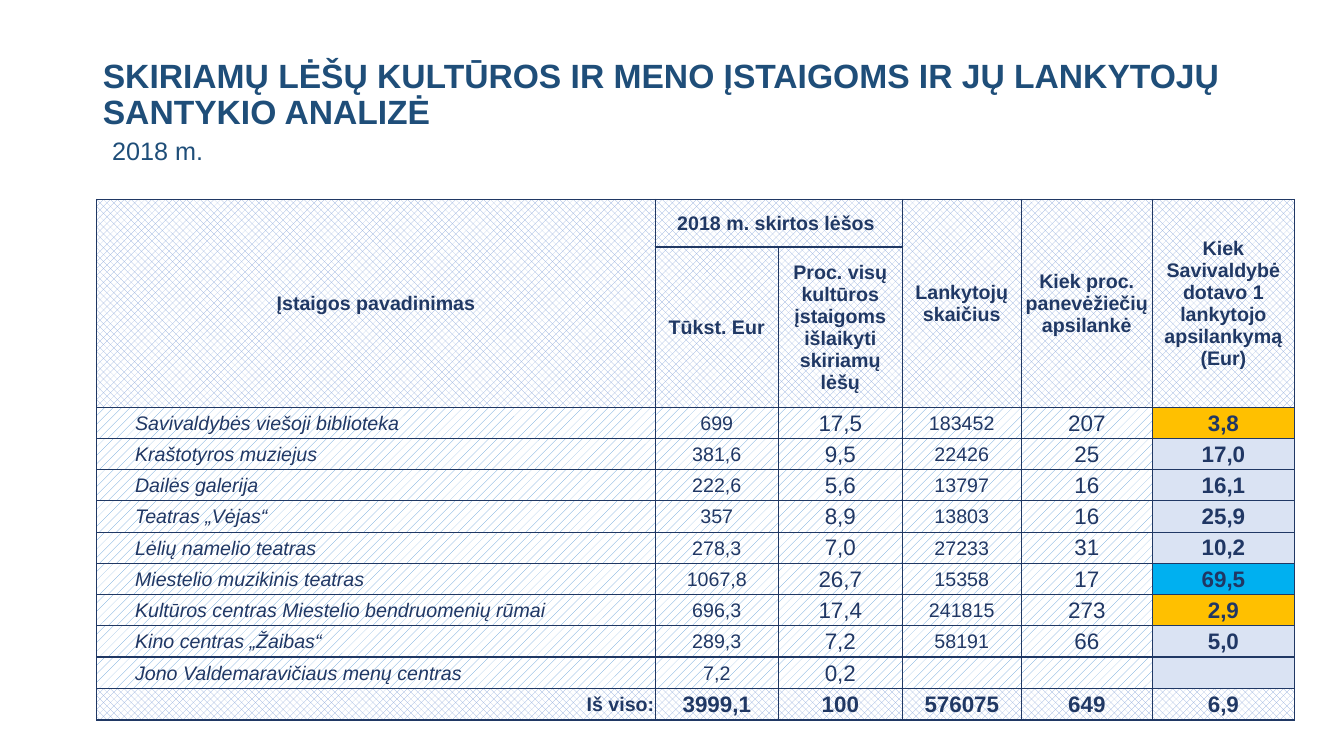
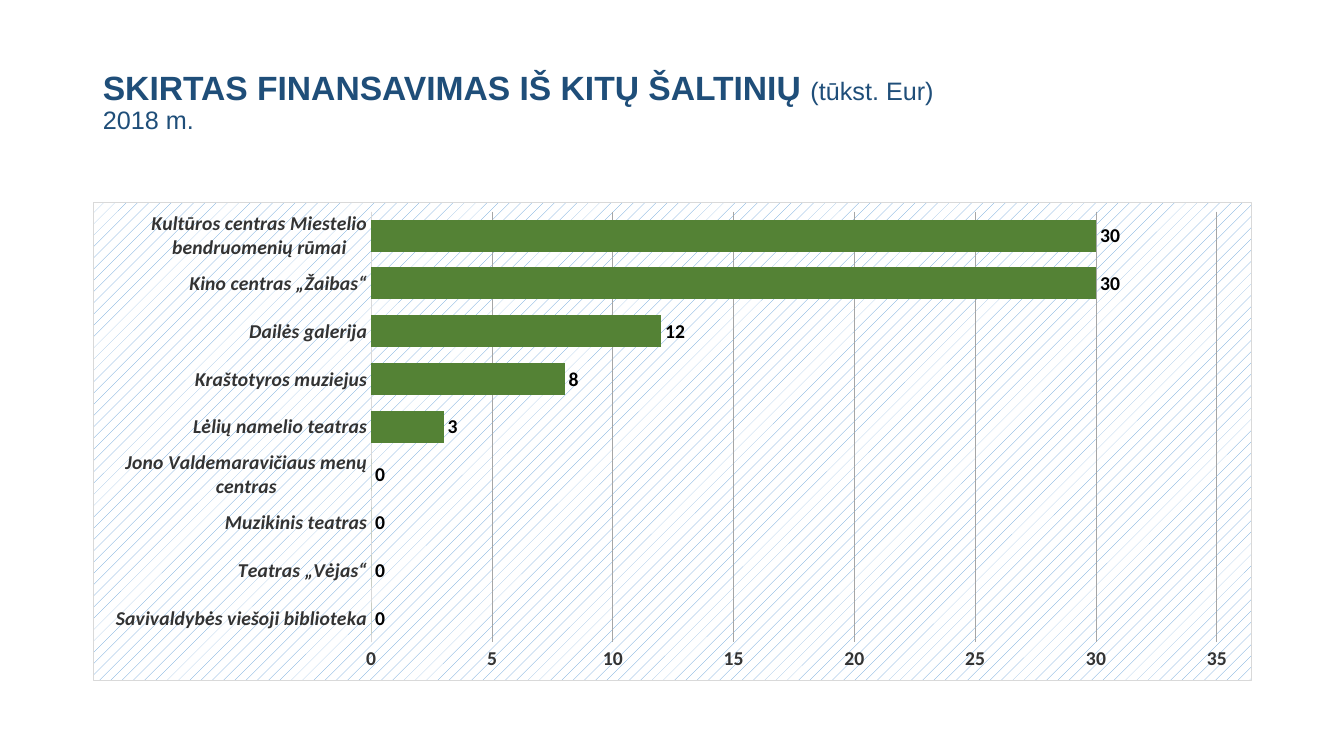
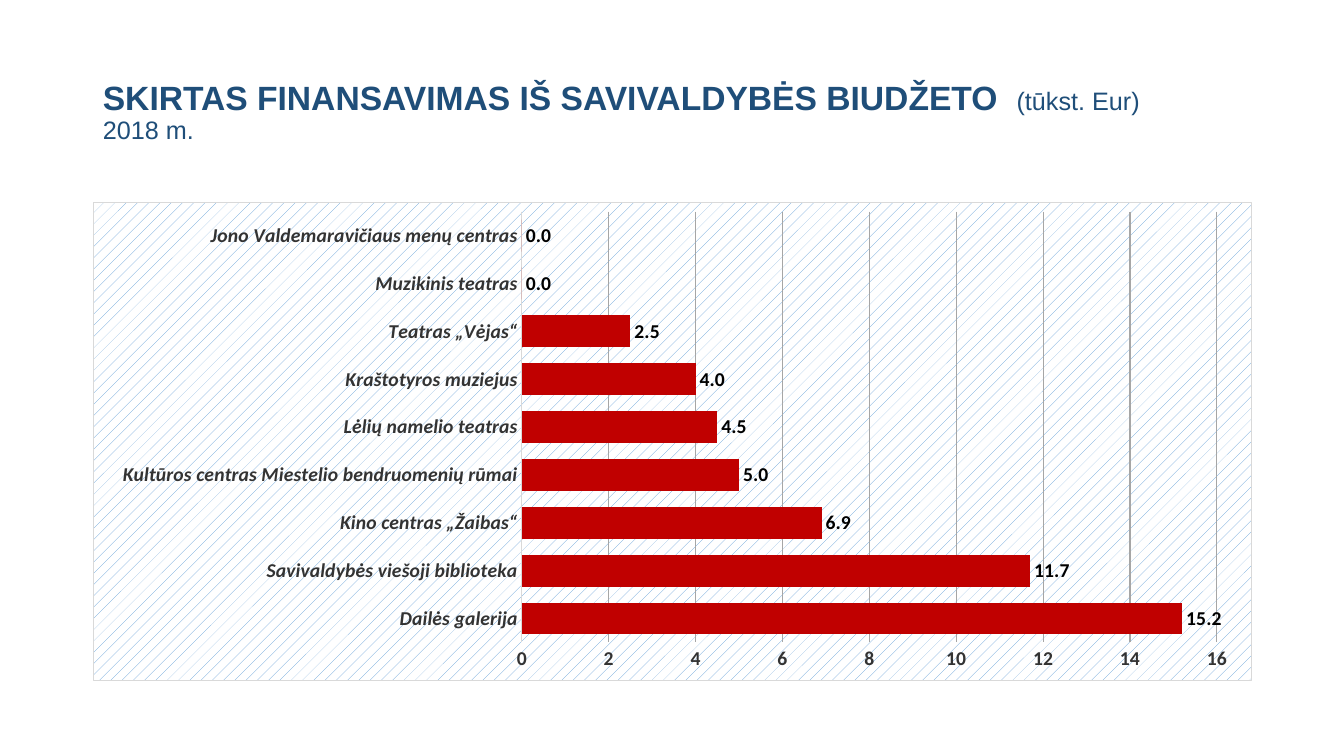
"""Build three slides on the funding of cultural institutions."""
from copy import deepcopy
from dataclasses import dataclass
from typing import NamedTuple

from pptx import Presentation
from pptx.chart.chart import Chart
from pptx.chart.data import CategoryChartData
from pptx.dml.color import RGBColor
from pptx.enum.chart import XL_CHART_TYPE, XL_LABEL_POSITION, XL_TICK_MARK
from pptx.enum.dml import MSO_PATTERN
from pptx.enum.text import MSO_ANCHOR, MSO_AUTO_SIZE, PP_ALIGN
from pptx.oxml import parse_xml
from pptx.oxml.ns import nsdecls, qn
from pptx.presentation import Presentation as Deck
from pptx.slide import Slide
from pptx.table import _Cell as Cell
from pptx.text.text import Font
from pptx.util import Inches, Pt

LEFT, CENTER, RIGHT = PP_ALIGN.LEFT, PP_ALIGN.CENTER, PP_ALIGN.RIGHT
MIDDLE = MSO_ANCHOR.MIDDLE
DENSE, LIGHT = MSO_PATTERN.PERCENT_50, MSO_PATTERN.PERCENT_20
NO_TICK = XL_TICK_MARK.NONE
BAR = XL_CHART_TYPE.BAR_CLUSTERED
OUTSIDE = XL_LABEL_POSITION.OUTSIDE_END
NO_FIT = MSO_AUTO_SIZE.NONE


@dataclass(frozen=True)
class Theme:
    """Colours, fonts and type sizes of the deck."""

    title: str = "1F4E79"
    ink: str = "203864"
    body: str = "203764"
    mesh: str = "8FAADC"
    hatch: str = "5B9BD5"
    white: str = "FFFFFF"
    black: str = "000000"
    axis: str = "333333"
    grid: str = "A6A6A6"
    edge: str = "D9D9D9"
    pale: str = "DAE3F3"
    gold: str = "FFC000"
    sky: str = "00B0F0"
    green: str = "548235"
    red: str = "C00000"
    face: str = "Arial"
    plot: str = "Calibri"
    big: int = 24
    mid: int = 18
    cell: int = 16
    small: int = 14
    tiny: int = 10


class Part(NamedTuple):
    """A stretch of title text, with line breaks."""

    text: str
    main: bool


class Row(NamedTuple):
    """One institution in the table."""

    name: str
    values: tuple[str, ...]
    mark: str


class Look(NamedTuple):
    """Type and pattern of a table cell."""

    size: int
    color: str
    bold: bool = False
    italic: bool = False
    align: PP_ALIGN = CENTER
    inset: float = 0.01


class Graph(NamedTuple):
    """A bar chart and its slide title."""

    head: str
    height: float
    color: str
    form: str
    top: int
    step: int
    start: float
    width: float
    bars: tuple[tuple[str, float], ...]


T = Theme()
COLS = (5.54, 1.22, 1.23, 1.18, 1.3, 1.41)
ROWS = (0.47, 1.59) + (0.31,) * 10
LIBRARY = "Savivaldybės viešoji biblioteka"
MUSEUM = "Kraštotyros muziejus"
GALLERY = "Dailės galerija"
DRAMA = "Teatras „Vėjas“"
PUPPET = "Lėlių namelio teatras"
CENTRE = "Kultūros centras Miestelio bendruomenių rūmai"
CINEMA = "Kino centras „Žaibas“"
ARTS = "Jono Valdemaravičiaus menų centras"
MUSIC = "Muzikinis teatras"
HEADS = {
    (0, 0): "Įstaigos pavadinimas",
    (0, 1): "2018 m. skirtos lėšos ",
    (0, 3): "Lankytojų skaičius",
    (0, 4): "Kiek proc. panevėžiečių apsilankė",
    (0, 5): "Kiek Savivaldybė dotavo 1 lankytojo apsilankymą (Eur)",
    (1, 1): "Tūkst. Eur",
    (1, 2): "Proc. visų kultūros įstaigoms išlaikyti skiriamų lėšų",
}
MERGES = (((0, 0), (1, 0)), ((0, 1), (0, 2)), ((0, 3), (1, 3)),
          ((0, 4), (1, 4)), ((0, 5), (1, 5)))
DATA = (
    Row(LIBRARY, ("699", "17,5", "183452", "207", "3,8"), T.gold),
    Row(MUSEUM, ("381,6", "9,5", "22426", "25", "17,0"), T.pale),
    Row(GALLERY, ("222,6", "5,6", "13797", "16", "16,1"), T.pale),
    Row(DRAMA, ("357", "8,9", "13803", "16", "25,9"), T.pale),
    Row(PUPPET, ("278,3", "7,0", "27233", "31", "10,2"), T.pale),
    Row("Miestelio muzikinis teatras",
        ("1067,8", "26,7", "15358", "17", "69,5"), T.sky),
    Row(CENTRE, ("696,3", "17,4", "241815", "273", "2,9"), T.gold),
    Row(CINEMA, ("289,3", "7,2", "58191", "66", "5,0"), T.pale),
    Row(ARTS, ("7,2", "0,2", "", "", ""), T.pale),
)
TOTAL = ("Iš viso:", "3999,1", "100", "576075", "649", "6,9")
HEAD = Look(T.small, T.ink, bold=True)
BODY = (
    Look(T.small, T.body, italic=True, align=LEFT, inset=0.38),
    Look(T.small, T.body),
    Look(T.cell, T.body),
    Look(T.small, T.body),
    Look(T.cell, T.body),
    Look(T.cell, T.body, bold=True),
)
SUM = HEAD._replace(size=T.cell)
GRAPHS = (
    Graph("SKIRTAS FINANSAVIMAS IŠ KITŲ ŠALTINIŲ ", 1.25, T.green, "0",
          35, 5, 0.24, 0.73,
          ((LIBRARY, 0), (DRAMA, 0), (MUSIC, 0), (ARTS, 0), (PUPPET, 3),
           (MUSEUM, 8), (GALLERY, 12), (CINEMA, 30), (CENTRE, 30))),
    Graph("SKIRTAS FINANSAVIMAS IŠ SAVIVALDYBĖS BIUDŽETO  ", 1.45, T.red,
          "0.0", 16, 2, 0.37, 0.6,
          ((GALLERY, 15.2), (LIBRARY, 11.7), (CINEMA, 6.9), (CENTRE, 5),
           (PUPPET, 4.5), (MUSEUM, 4), (DRAMA, 2.5), (MUSIC, 0),
           (ARTS, 0))),
)


def rgb(code: str) -> RGBColor:
    """Turn a hex code into a colour."""
    return RGBColor.from_string(code)


def style(font: Font, face: str, size: int, color: str,
          bold: bool = False, italic: bool = False) -> None:
    """Set every trait of a font."""
    font.name, font.size = face, Pt(size)
    font.bold, font.italic = bold, italic
    font.color.rgb = rgb(color)


def add_page(deck: Deck, height: float, parts: tuple[Part, ...]) -> Slide:
    """Add a slide with a formatted title."""
    slide = deck.slides.add_slide(deck.slide_layouts[5])
    title = slide.shapes.title
    title.left, title.top = Inches(0.92), Inches(0.4)
    title.width, title.height = Inches(11.5), Inches(height)
    frame = title.text_frame
    frame.word_wrap, frame.auto_size = True, NO_FIT
    frame.vertical_anchor = MIDDLE
    para = frame.paragraphs[0]
    para.alignment, para.line_spacing = LEFT, 0.9
    for part in parts:
        for turn, line in enumerate(part.text.split("\n")):
            if turn:
                para.add_line_break()
            run = para.add_run()
            run.text = line
            size = T.big if part.main else T.mid
            style(run.font, T.face, size, T.title, part.main)
    for gap in para._p.findall(qn("a:br")):
        gap.insert(0, deepcopy(gap.getprevious().find(qn("a:rPr"))))
    return slide


def add_edges(cell: Cell) -> None:
    """Draw a thin line on all four sides of a cell."""
    props = cell._tc.get_or_add_tcPr()
    for spot, side in enumerate("LRTB"):
        props.insert(spot, parse_xml(
            f'<a:ln{side} {nsdecls("a")} w="12700"><a:solidFill>'
            f'<a:srgbClr val="{T.ink}"/></a:solidFill></a:ln{side}>'))


def mesh(cell: Cell, kind: MSO_PATTERN, color: str) -> None:
    """Fill a cell with a pattern on white."""
    cell.fill.patterned()
    cell.fill.pattern = kind
    cell.fill.fore_color.rgb = rgb(color)
    cell.fill.back_color.rgb = rgb(T.white)


def put(cell: Cell, text: str, look: Look) -> None:
    """Write and format the text of a cell."""
    cell.vertical_anchor = MIDDLE
    cell.margin_left = Inches(look.inset)
    cell.margin_right = cell.margin_top = Inches(0.01)
    cell.margin_bottom = 0
    para = cell.text_frame.paragraphs[0]
    para.text, para.alignment = text, look.align
    for run in para.runs:
        style(run.font, T.face, look.size, look.color, look.bold, look.italic)


def add_grid(slide: Slide) -> None:
    """Add the table of funds and visitors."""
    table = slide.shapes.add_table(
        len(ROWS), len(COLS), Inches(0.96), Inches(1.98),
        Inches(sum(COLS)), Inches(sum(ROWS))).table
    table.first_row = table.horz_banding = False
    for col, width in zip(table.columns, COLS):
        col.width = Inches(width)
    for row, height in zip(table.rows, ROWS):
        row.height = Inches(height)
    for cell in table.iter_cells():
        mesh(cell, DENSE, T.mesh)
        add_edges(cell)
    for start, end in MERGES:
        table.cell(*start).merge(table.cell(*end))
    for spot, text in HEADS.items():
        put(table.cell(*spot), text, HEAD)
    for line, row in enumerate(DATA, 2):
        for col, text in enumerate((row.name, *row.values)):
            cell = table.cell(line, col)
            mesh(cell, LIGHT, T.hatch)
            put(cell, text, BODY[col])
        cell.fill.solid()
        cell.fill.fore_color.rgb = rgb(row.mark)
    for col, text in enumerate(TOTAL):
        look = SUM if col else HEAD._replace(align=RIGHT)
        put(table.cell(len(ROWS) - 1, col), text, look)


def frame_chart(chart: Chart, start: float, width: float) -> None:
    """Give a chart its hatched ground, border and plot area."""
    root = chart._chartSpace.find(qn("c:chart"))
    root.addnext(parse_xml(
        f'<c:spPr {nsdecls("c", "a")}><a:pattFill prst="pct10">'
        f'<a:fgClr><a:srgbClr val="{T.hatch}"/></a:fgClr>'
        f'<a:bgClr><a:srgbClr val="{T.white}"/></a:bgClr></a:pattFill>'
        f'<a:ln w="9525"><a:solidFill><a:srgbClr val="{T.edge}"/>'
        '</a:solidFill></a:ln></c:spPr>'))
    area = root.find(qn("c:plotArea"))
    old = area.find(qn("c:layout"))
    if old is not None:
        area.remove(old)
    spots = {"x": start, "y": 0.02, "w": width, "h": 0.9}
    modes = "".join(f'<c:{key}Mode val="edge"/>' for key in "xy")
    sizes = "".join(f'<c:{key} val="{num}"/>' for key, num in spots.items())
    area.insert(0, parse_xml(
        f'<c:layout {nsdecls("c")}><c:manualLayout>'
        f'<c:layoutTarget val="inner"/>{modes}{sizes}'
        '</c:manualLayout></c:layout>'))


def add_bars(slide: Slide, graph: Graph) -> None:
    """Add a bar chart with value labels."""
    data = CategoryChartData(number_format=graph.form)
    data.categories = [name for name, _ in graph.bars]
    data.add_series("Series 1", [value for _, value in graph.bars])
    chart = slide.shapes.add_chart(
        BAR, Inches(0.92), Inches(2), Inches(11.5), Inches(4.76), data).chart
    chart.has_title = chart.has_legend = False
    style(chart.font, T.plot, T.tiny, T.black)
    names, scale = chart.category_axis, chart.value_axis
    for axis in (names, scale):
        axis.major_tick_mark = axis.minor_tick_mark = NO_TICK
        style(axis.tick_labels.font, T.plot, T.small, T.axis, True,
              axis is names)
    names.has_major_gridlines = False
    names.format.line.color.rgb = rgb(T.edge)
    names.format.line.width = Pt(0.75)
    scale.minimum_scale, scale.maximum_scale = 0, graph.top
    scale.major_unit = graph.step
    scale.tick_labels.number_format = "0"
    scale.tick_labels.number_format_is_linked = False
    scale.format.line.fill.background()
    grid = scale.major_gridlines.format.line
    grid.color.rgb, grid.width = rgb(T.grid), Pt(0.75)
    plot = chart.plots[0]
    plot.gap_width, plot.vary_by_categories = 50, False
    fill = plot.series[0].format.fill
    fill.solid()
    fill.fore_color.rgb = rgb(graph.color)
    plot.has_data_labels = True
    labels = plot.data_labels
    labels.show_value, labels.position = True, OUTSIDE
    labels.number_format = graph.form
    labels.number_format_is_linked = False
    style(labels.font, T.plot, T.small, T.black, True)
    frame_chart(chart, graph.start, graph.width)


def main() -> None:
    """Build and save the deck."""
    deck = Presentation()
    deck.slide_width, deck.slide_height = Inches(13.33), Inches(7.5)
    head = ("SKIRIAMŲ LĖŠŲ KULTŪROS IR MENO ĮSTAIGOMS "
            "IR JŲ LANKYTOJŲ SANTYKIO ANALIZĖ\n ")
    add_grid(add_page(deck, 1.45, (Part(head, True), Part("2018 m.", False))))
    for graph in GRAPHS:
        parts = (Part(graph.head, True), Part("(tūkst. Eur)\n2018 m.", False))
        add_bars(add_page(deck, graph.height, parts), graph)
    deck.save("out.pptx")


if __name__ == "__main__":
    main()
